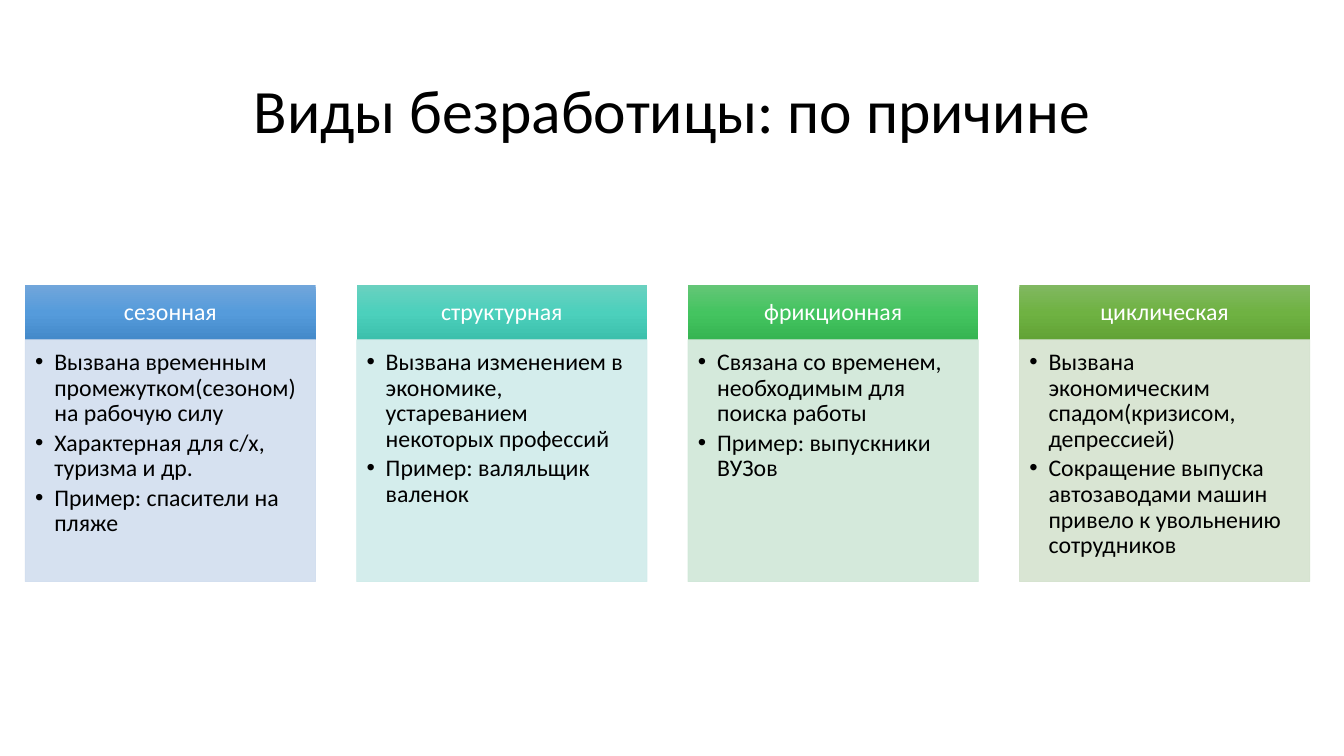
from copy import deepcopy
from dataclasses import dataclass

from lxml import etree
from pptx import Presentation
from pptx.dml.color import RGBColor
from pptx.enum import shapes, text
from pptx.oxml import ns
from pptx.util import Inches, Pt


@dataclass(frozen=True)
class Theme:
    font: str = "Calibri"
    dark: str = "000000"
    light: str = "FFFFFF"
    title: int = 44
    body: int = 17
    alpha: int = 90


THEME = Theme()
LEFT, STEP, WIDTH = 0.25, 3.287, 2.88
TOP, HEAD, BODY = 2.83, 0.54, 2.4

KINDS = [
    ("сезонная", ("71A6DB", "559BDB", "448ACA"), "D2DEEF", [
        "Вызвана временным промежутком(сезоном) на рабочую силу",
        "Характерная для с/х, туризма и др.",
        "Пример: спасители на пляже",
    ]),
    ("структурная", ("6AD1C0", "4CD0BC", "3CC0AC"), "D0ECEA", [
        "Вызвана изменением в экономике, устареванием некоторых профессий",
        "Пример: валяльщик валенок",
    ]),
    ("фрикционная", ("64C677", "44C460", "36B552"), "D0E7D8", [
        "Связана со временем, необходимым для поиска работы",
        "Пример: выпускники ВУЗов",
    ]),
    ("циклическая", ("81B861", "6FB242", "62A336"), "D5E3CF", [
        "Вызвана экономическим спадом(кризисом, депрессией)",
        "Сокращение выпуска автозаводами машин привело к увольнению сотрудников",
    ]),
]


def add_dot(para):
    props = para._p.get_or_add_pPr()
    props.set("marL", str(Inches(0.19)))
    props.set("indent", str(-Inches(0.19)))
    etree.SubElement(props, ns.qn("a:buFont"), typeface="Arial")
    etree.SubElement(props, ns.qn("a:buChar"), char="•")


def write(shape, lines, size=THEME.body, color=THEME.dark, align="CENTER",
          anchor="MIDDLE", insets=(0.13, 0.08, 0.13, 0.08), after=0, dots=False):
    frame = shape.text_frame
    frame.word_wrap = True
    frame.vertical_anchor = text.MSO_ANCHOR[anchor]
    (frame.margin_left, frame.margin_top,
     frame.margin_right, frame.margin_bottom) = map(Inches, insets)
    for i, line in enumerate(lines):
        para = frame.add_paragraph() if i else frame.paragraphs[0]
        para.alignment = text.PP_ALIGN[align]
        para.line_spacing = 0.9
        para.space_after = Pt(after)
        if dots:
            add_dot(para)
        run = para.add_run()
        run.text = line
        run.font.name = THEME.font
        run.font.size = Pt(size)
        run.font.color.rgb = RGBColor.from_string(color)


def add_box(slide, left, top, height):
    box = slide.shapes.add_shape(
        shapes.MSO_SHAPE.RECTANGLE,
        Inches(left), Inches(top), Inches(WIDTH), Inches(height))
    box.shadow.inherit = False
    return box


def shade(box, colors):
    box.line.fill.background()
    box.fill.gradient()
    box.fill.gradient_angle = 270
    stops = box.element.spPr.find(".//" + ns.qn("a:gsLst"))
    stops.append(deepcopy(stops[-1]))
    for i, (stop, color) in enumerate(zip(box.fill.gradient_stops, colors)):
        stop.position = i / 2
        stop.color.rgb = RGBColor.from_string(color)


def tint(box, color):
    box.line.width = Pt(0.5)
    box.fill.solid()
    for tone in (box.fill.fore_color, box.line.color):
        tone.rgb = RGBColor.from_string(color)
    for node in box.element.spPr.iter(ns.qn("a:srgbClr")):
        etree.SubElement(node, ns.qn("a:alpha"), val=str(THEME.alpha * 1000))


def add_kind(slide, left, name, colors, pale, points):
    head = add_box(slide, left, TOP, HEAD)
    shade(head, colors)
    write(head, [name], color=THEME.light)
    body = add_box(slide, left, TOP + HEAD, BODY)
    tint(body, pale)
    write(body, points, align="LEFT", anchor="TOP",
          insets=(0.1, 0.1, 0.13, 0.15), after=2.55, dots=True)


def add_title(slide, line):
    title = slide.shapes.title
    title.left, title.top = Inches(0.92), Inches(0.4)
    title.width, title.height = Inches(11.5), Inches(1.45)
    write(title, [line], size=THEME.title, insets=(0.1, 0.05, 0.1, 0.05))


def main():
    deck = Presentation()
    deck.slide_width, deck.slide_height = Inches(13.33), Inches(7.5)
    slide = deck.slides.add_slide(deck.slide_layouts[5])
    add_title(slide, "Виды безработицы: по причине")
    for i, kind in enumerate(KINDS):
        add_kind(slide, LEFT + i * STEP, *kind)
    deck.save("out.pptx")


if __name__ == "__main__":
    main()
